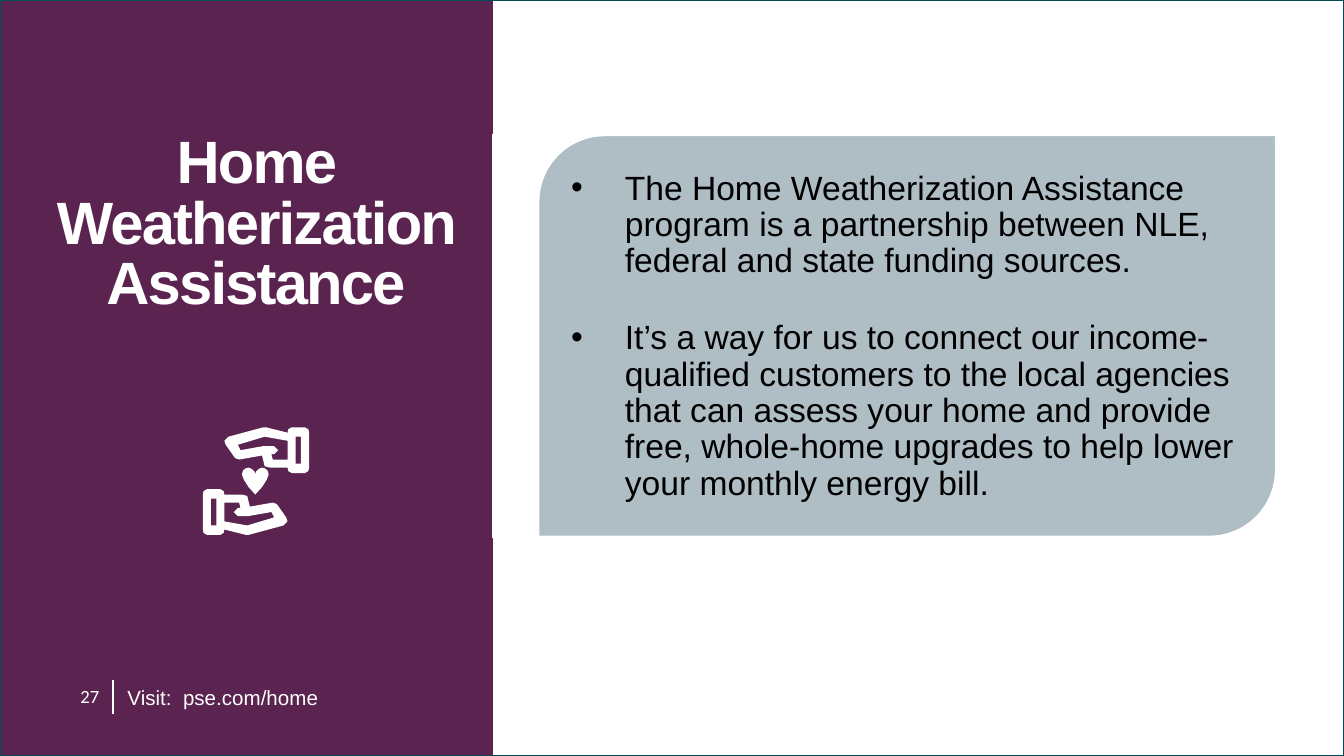
"""Build the Home Weatherization Assistance slide."""
from dataclasses import dataclass
from typing import NamedTuple, Optional

from lxml.etree import SubElement
from pptx import Presentation
from pptx.dml.color import RGBColor
from pptx.enum.shapes import MSO_CONNECTOR as Connector, MSO_SHAPE as Preset
from pptx.enum.text import MSO_ANCHOR as Anchor, MSO_AUTO_SIZE as AutoSize, PP_ALIGN as Align
from pptx.oxml.ns import qn
from pptx.util import Emu, Pt

EMU_PER_PX = 4572


class Point(NamedTuple):
    x: int
    y: int


class Box(NamedTuple):
    left: int
    top: int
    width: int
    height: int


@dataclass(frozen=True)
class TextStyle:
    size: int
    color: RGBColor
    font: str = "Arial"
    bold: bool = False
    spacing: int = 0
    line_spacing: float = 1.0


@dataclass(frozen=True)
class Theme:
    purple: RGBColor = RGBColor(0x5B, 0x23, 0x4F)
    white: RGBColor = RGBColor(0xFF, 0xFF, 0xFF)
    teal: RGBColor = RGBColor(0x00, 0x4B, 0x54)
    gray_blue: RGBColor = RGBColor(0x9C, 0xAD, 0xB7)
    title: TextStyle = TextStyle(32, RGBColor(0xFF, 0xFF, 0xFF), bold=True, spacing=-100, line_spacing=0.85)
    body: TextStyle = TextStyle(18, RGBColor(0, 0, 0), line_spacing=0.9)
    number: TextStyle = TextStyle(10, RGBColor(0xFF, 0xFF, 0xFF), font="Calibri")
    footer: TextStyle = TextStyle(11, RGBColor(0xFF, 0xFF, 0xFF), line_spacing=0.9)


@dataclass(frozen=True)
class Block:
    box: Box
    style: TextStyle
    texts: tuple[str, ...]
    bullet_indent: int = 0
    gap: int = 0
    centered: bool = False
    inset: bool = True


THEME = Theme()
SLIDE = Box(0, 0, 2000, 1125)
PANEL_LEFT = 734
TITLE = Block(Box(62, 36, 638, 600), THEME.title, ("Home Weatherization Assistance",),
              centered=True, inset=False)
BODY = Block(Box(850, 202, 1032, 598), THEME.body, (
    "The Home Weatherization Assistance program is a partnership between NLE, "
    "federal and state funding sources.",
    "It’s a way for us to connect our income-qualified customers to the local agencies "
    "that can assess your home and provide free, whole-home upgrades to help lower "
    "your monthly energy bill.",
), bullet_indent=80, gap=22, inset=False)
NUMBER = Block(Box(100, 1010, 70, 54), THEME.number, ("27",))
FOOTER = Block(Box(170, 1014, 850, 50), THEME.footer, ("Visit:  pse.com/home",))

PALM = [
    [(412, 750), (406, 748), (372, 754), (368, 738), (360, 736), (334, 736), (333, 731),
     (328, 728), (308, 728), (303, 731), (302, 736), (302, 788), (303, 793), (308, 796),
     (328, 796), (333, 793), (334, 788), (366, 796), (370, 796), (422, 782), (428, 776), (426, 770)],
    [(314, 782), (314, 742), (322, 742), (322, 782)],
    [(368, 782), (334, 776), (334, 748), (356, 748), (358, 756), (354, 756), (348, 762),
     (354, 768), (370, 768), (404, 762), (408, 770)],
]
ICON_SUM = Point(762, 1432)
HEART_CENTER = 380
HALF_HEART = [(380, 706), (381, 702), (385, 698), (390, 696), (394, 697), (398, 700),
              (400, 706), (397, 714), (390, 725), (380, 736)]


def px(value: int) -> Emu:
    return Emu(value * EMU_PER_PX)


def place(shape, box: Box) -> None:
    shape.left, shape.top, shape.width, shape.height = map(px, box)


def add_panel(shapes, preset: Preset, box: Box, fill: Optional[RGBColor] = None,
              line: Optional[RGBColor] = None, line_width: float = 1, alpha: int = 100) -> None:
    shape = shapes.add_shape(preset, *map(px, box))
    shape.shadow.inherit = False
    if fill is None:
        shape.fill.background()
    else:
        shape.fill.solid()
        shape.fill.fore_color.rgb = fill
    if alpha < 100:
        color = shape._element.spPr.find(qn("a:solidFill"))[0]
        SubElement(color, qn("a:alpha"), val=str(alpha * 1000))
    if line is None:
        shape.line.fill.background()
    else:
        shape.line.color.rgb = line
        shape.line.width = Pt(line_width)


def add_rule(shapes, start: Point, end: Point, width: float) -> None:
    rule = shapes.add_connector(Connector.STRAIGHT, *map(px, start + end))
    rule.line.color.rgb = THEME.white
    rule.line.width = Pt(width)
    SubElement(rule._element.spPr, qn("a:effectLst"))


def add_outline(shapes, contours: list[list[tuple[int, int]]]) -> None:
    builder = shapes.build_freeform(*contours[0][0], scale=EMU_PER_PX)
    for index, contour in enumerate(contours):
        if index:
            builder.move_to(*contour[0])
        builder.add_line_segments(contour[1:], close=True)
    shape = builder.convert_to_shape()
    shape.shadow.inherit = False
    shape.fill.solid()
    shape.fill.fore_color.rgb = THEME.white
    shape.line.fill.background()


def write(shape, block: Block) -> None:
    frame, style = shape.text_frame, block.style
    frame.word_wrap = True
    frame.auto_size = AutoSize.NONE
    if not block.inset:
        frame.vertical_anchor = Anchor.MIDDLE
        frame.margin_left = frame.margin_top = frame.margin_right = frame.margin_bottom = 0
    for index, text in enumerate(block.texts):
        paragraph = frame.add_paragraph() if index else frame.paragraphs[0]
        paragraph.alignment = Align.CENTER if block.centered else Align.LEFT
        paragraph.line_spacing = style.line_spacing
        paragraph.space_before = Pt(block.gap if index else 0)
        if block.bullet_indent:
            properties = paragraph._p.get_or_add_pPr()
            properties.set("marL", str(px(block.bullet_indent)))
            properties.set("indent", str(-px(block.bullet_indent)))
            SubElement(properties, qn("a:buFont"), typeface="Arial")
            SubElement(properties, qn("a:buChar"), char="•")
        run = paragraph.add_run()
        run.text = text
        run.font.name, run.font.size, run.font.bold = style.font, Pt(style.size), style.bold
        run.font.color.rgb = style.color
        if style.spacing:
            run._r.get_or_add_rPr().set("spc", str(style.spacing))


def add_text(shapes, block: Block) -> None:
    write(shapes.add_textbox(*map(px, block.box)), block)


def add_icon(shapes) -> None:
    group = shapes.add_group_shape().shapes
    upper_hand = [[(ICON_SUM.x - x, ICON_SUM.y - y) for x, y in contour] for contour in PALM]
    left_half = [(2 * HEART_CENTER - x, y) for x, y in reversed(HALF_HEART[1:-1])]
    for contours in (PALM, upper_hand, [HALF_HEART + left_half]):
        add_outline(group, contours)


def main() -> None:
    presentation = Presentation()
    presentation.slide_width, presentation.slide_height = px(SLIDE.width), px(SLIDE.height)
    slide = presentation.slides.add_slide(presentation.slide_layouts[5])
    slide.background.fill.solid()
    slide.background.fill.fore_color.rgb = THEME.purple
    shapes = slide.shapes

    add_panel(shapes, Preset.RECTANGLE, Box(PANEL_LEFT, 0, SLIDE.width - PANEL_LEFT, SLIDE.height),
              fill=THEME.white)
    add_panel(shapes, Preset.RECTANGLE, SLIDE, line=THEME.teal)
    add_panel(shapes, Preset.ROUND_2_DIAG_RECTANGLE, Box(800, 200, 1100, 600),
              fill=THEME.gray_blue, line=THEME.white, line_width=2, alpha=80)
    add_rule(shapes, Point(PANEL_LEFT, 200), Point(PANEL_LEFT, 800), 1)

    place(shapes.title, TITLE.box)
    write(shapes.title, TITLE)
    add_text(shapes, BODY)

    page_mark = shapes.add_group_shape().shapes
    add_text(page_mark, NUMBER)
    add_rule(page_mark, Point(168, 1012), Point(168, 1062), 0.75)
    add_text(shapes, FOOTER)
    add_icon(shapes)
    presentation.save("out.pptx")


if __name__ == "__main__":
    main()
